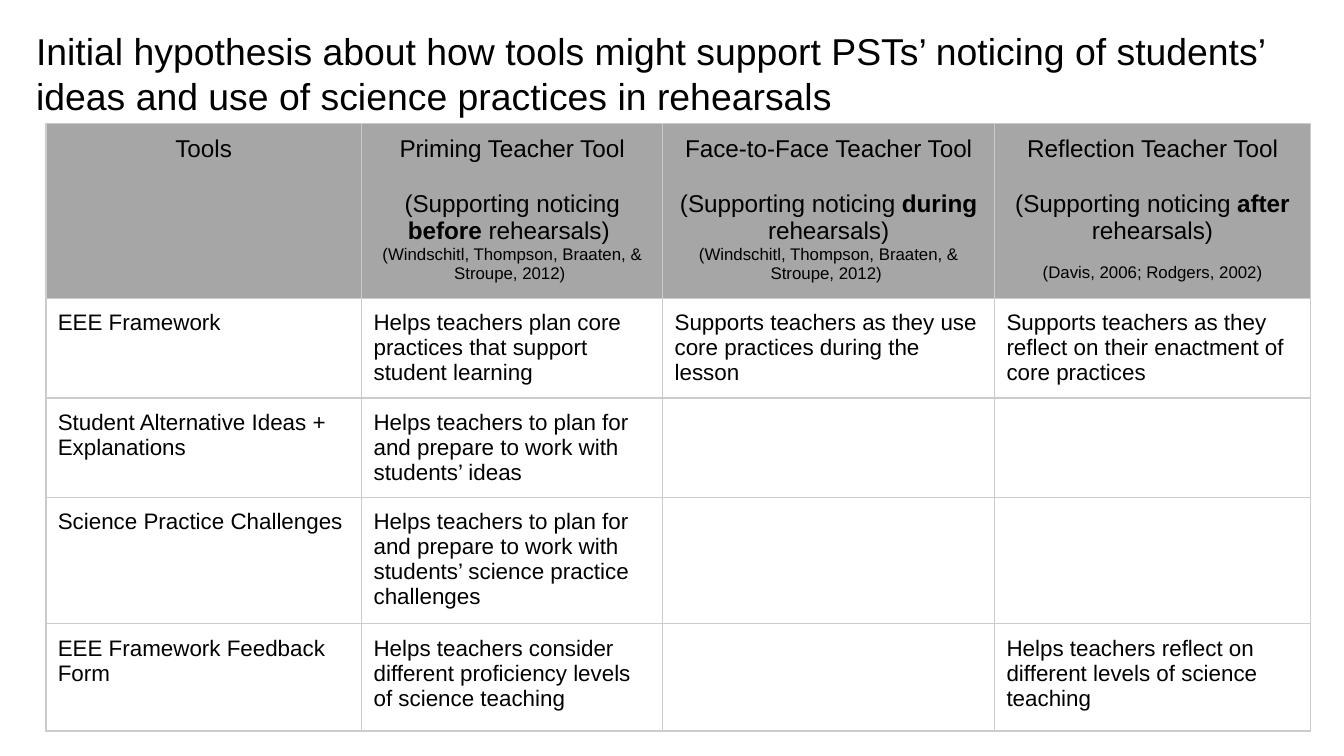
from lxml.etree import SubElement
from pptx import Presentation
from pptx.dml.color import RGBColor
from pptx.enum.text import MSO_ANCHOR, PP_ALIGN
from pptx.oxml.ns import qn
from pptx.util import Inches, Pt

BLACK = RGBColor(0x00, 0x00, 0x00)
HEADER_GRAY = RGBColor(0xA6, 0xA6, 0xA6)
BORDER_GRAY = RGBColor(0xCC, 0xCC, 0xCC)

COLUMN_WIDTHS = [2.35, 2.24, 2.47, 2.35]
ROW_HEIGHTS = [1.29, 0.73, 0.73, 0.87, 0.8]
PRIMING_CITATION = "(Windschitl, Thompson, Braaten, & Stroupe, 2012) "
TOOL_TYPES = [
    ("Priming Teacher Tool", "before", " rehearsals) ", PRIMING_CITATION, 0),
    ("Face-to-Face Teacher Tool", "during", " rehearsals)", PRIMING_CITATION, 0),
    ("Reflection Teacher Tool", "after", " rehearsals)", "(Davis, 2006; Rodgers, 2002)", 10),
]
TOOL_ROWS = [
    ["EEE Framework",
     "Helps teachers plan core practices that support student learning",
     "Supports teachers as they use core practices during the lesson",
     "Supports teachers as they reflect on their enactment of core practices"],
    ["Student Alternative Ideas + Explanations",
     "Helps teachers to plan for and prepare to work with students’ ideas", "", ""],
    ["Science Practice Challenges",
     "Helps teachers to plan for and prepare to work with students’ science practice challenges",
     "", ""],
    ["EEE Framework Feedback Form",
     "Helps teachers consider different proficiency levels of science teaching", "",
     "Helps teachers reflect on different levels of science teaching"],
]


def style_paragraph(paragraph, size, alignment=PP_ALIGN.LEFT, space_before=0):
    paragraph.font.name = "Arial"
    paragraph.font.size = Pt(size)
    paragraph.font.color.rgb = BLACK
    paragraph.alignment = alignment
    paragraph.space_before = Pt(space_before)


def add_borders(cell):
    properties = cell._tc.get_or_add_tcPr()
    for position, side in enumerate(["a:lnL", "a:lnR", "a:lnT", "a:lnB"]):
        line = SubElement(properties, qn(side), w=str(Pt(1)))
        properties.insert(position, line)
        fill = SubElement(line, qn("a:solidFill"))
        SubElement(fill, qn("a:srgbClr"), val=str(BORDER_GRAY))


presentation = Presentation()
presentation.slide_width = Inches(10)
presentation.slide_height = Inches(10 * 9 / 16)
slide = presentation.slides.add_slide(presentation.slide_layouts[6])

title = slide.shapes.add_textbox(Inches(0.17), Inches(0.11), Inches(9.75), Inches(0.63))
title_frame = title.text_frame
title_frame.word_wrap = True
title_frame.margin_left = title_frame.margin_right = Inches(0.1)
title_frame.margin_top = title_frame.margin_bottom = Inches(0.1)
title_frame.text = (
    "Initial hypothesis about how tools might support PSTs’ noticing of students’ "
    "ideas and use of science practices in rehearsals"
)
style_paragraph(title_frame.paragraphs[0], 20)

table = slide.shapes.add_table(
    len(ROW_HEIGHTS), len(COLUMN_WIDTHS), Inches(0.34), Inches(0.92),
    Inches(sum(COLUMN_WIDTHS)), Inches(sum(ROW_HEIGHTS)),
).table
table.first_row = False
table.horz_banding = False
for column, width in zip(table.columns, COLUMN_WIDTHS):
    column.width = Inches(width)
for row, height in zip(table.rows, ROW_HEIGHTS):
    row.height = Inches(height)

for cell in table.iter_cells():
    cell.margin_left = cell.margin_right = cell.margin_top = Inches(0.09)
    cell.margin_bottom = Inches(0.05)
    cell.vertical_anchor = MSO_ANCHOR.TOP
    cell.fill.background()
    add_borders(cell)

for cell in table.rows[0].cells:
    cell.fill.solid()
    cell.fill.fore_color.rgb = HEADER_GRAY

tools_header = table.cell(0, 0).text_frame
tools_header.text = "Tools"
style_paragraph(tools_header.paragraphs[0], 13, PP_ALIGN.CENTER)

for column_index, (name, moment, ending, citation, gap) in enumerate(TOOL_TYPES, start=1):
    header = table.cell(0, column_index).text_frame
    header.text = name
    style_paragraph(header.paragraphs[0], 13, PP_ALIGN.CENTER)

    purpose = header.add_paragraph()
    style_paragraph(purpose, 13, PP_ALIGN.CENTER, 15)
    for text, bold in [("(Supporting noticing ", False), (moment, True), (ending, False)]:
        run = purpose.add_run()
        run.text = text
        run.font.bold = bold

    source = header.add_paragraph()
    source.text = citation
    style_paragraph(source, 9, PP_ALIGN.CENTER, gap)

for row_index, texts in enumerate(TOOL_ROWS, start=1):
    for column_index, text in enumerate(texts):
        body = table.cell(row_index, column_index).text_frame
        body.text = text
        style_paragraph(body.paragraphs[0], 12)

presentation.save("out.pptx")
